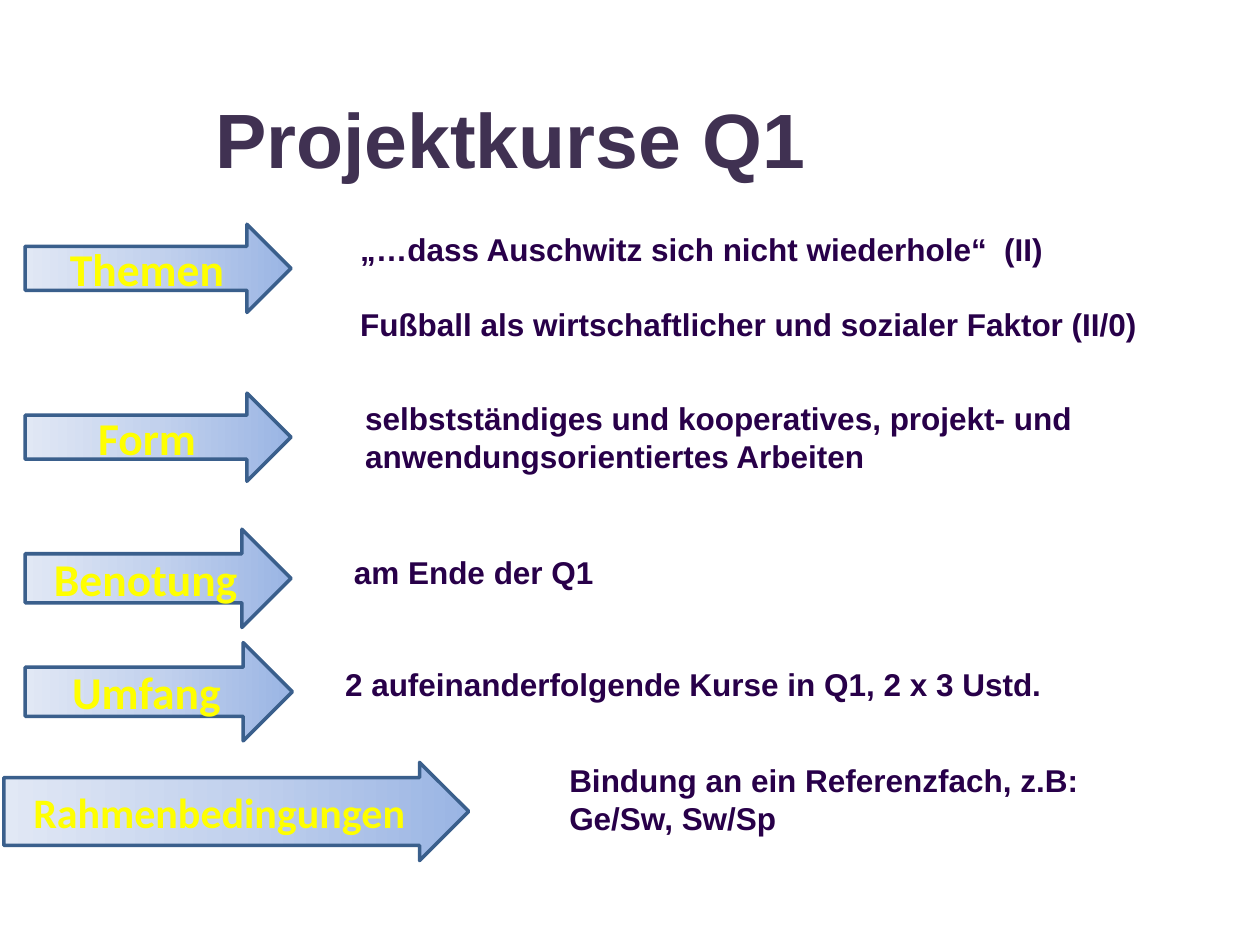
import copy

import pptx
import pptx.dml.color
import pptx.enum.shapes
import pptx.enum.text
import pptx.oxml.ns
import pptx.util

RGBColor = pptx.dml.color.RGBColor
WHITE = RGBColor(0xFF, 0xFF, 0xFF)
YELLOW = RGBColor(0xFF, 0xFF, 0x00)
OUTLINE = RGBColor(0x3A, 0x5F, 0x8C)
INDIGO = RGBColor(0x28, 0x00, 0x49)
PLUM = RGBColor(0x40, 0x31, 0x52)
GRADIENT = (
    RGBColor(0x9A, 0xB5, 0xE4),
    RGBColor(0xC2, 0xD1, 0xED),
    RGBColor(0xE1, 0xE8, 0xF5),
)

WIDTH = pptx.util.Inches(10)
HEIGHT = pptx.util.Inches(7.5)

LABEL = {"name": "Calibri", "bold": True}
BODY = {"name": "Arial", "bold": True, "size": pptx.util.Pt(18)}
TITLE = {"name": "Arial", "bold": True, "size": pptx.util.Pt(44)}
PARAGRAPH_GAP = pptx.util.Pt(21)

ARROWS = [
    ("Themen", (2, 23.73, 21.1, 9.33), 26, 0.5),
    ("Form", (2, 41.6, 21.1, 9.33), 26, 0.5),
    ("Benotung", (2, 56, 21.1, 10.4), 26, 0.5),
    ("Umfang", (2, 68, 21.2, 10.4), 26, 0.5),
    ("Rahmenbedingungen", (0.3, 80.67, 36.9, 10.4), 24, 0.69),
]
DETAILS = [
    (["„…dass Auschwitz sich nicht wiederhole“  (II)",
      "Fußball als wirtschaftlicher und sozialer Faktor (II/0)"],
     (27.6, 23.73, 68, 13.47)),
    (["selbstständiges und kooperatives, projekt- und "
      "anwendungsorientiertes Arbeiten"], (28, 41.6, 70.3, 9.47)),
    (["am Ende der Q1"], (27.1, 57.87, 62.5, 5.33)),
    (["2 aufeinanderfolgende Kurse in Q1, 2 x 3 Ustd."],
     (26.4, 69.73, 70.3, 5.33)),
    (["Bindung an ein Referenzfach, z.B:  Ge/Sw, Sw/Sp"],
     (44.2, 79.87, 51.4, 9.47)),
]


def place(shares):
    sides = (WIDTH, HEIGHT, WIDTH, HEIGHT)
    return [int(side * share / 100) for side, share in zip(sides, shares)]


def set_format(target, values):
    for name, value in values.items():
        setattr(target, name, value)


def write(p, text, style, color):
    r = p.add_run()
    r.text = text
    set_format(r.font, style)
    r.font.color.rgb = color


def fill_gradient(sp):
    sp.fill.gradient()
    sp.fill.gradient_angle = 180
    stops = sp._element.spPr.find(".//" + pptx.oxml.ns.qn("a:gsLst"))
    stops.insert(1, copy.deepcopy(stops[0]))
    for i, (stop, color) in enumerate(zip(sp.fill.gradient_stops, GRADIENT)):
        stop.position = i / 2
        stop.color.rgb = color


def add_arrow(s, text, shares, size, shaft):
    kind = pptx.enum.shapes.MSO_SHAPE.RIGHT_ARROW
    sp = s.shapes.add_shape(kind, *place(shares))
    sp.shadow.inherit = False
    sp.adjustments[0] = shaft
    fill_gradient(sp)
    sp.line.color.rgb = OUTLINE
    sp.line.width = pptx.util.Pt(2)
    tf = sp.text_frame
    tf.vertical_anchor = pptx.enum.text.MSO_ANCHOR.MIDDLE
    p = tf.paragraphs[0]
    p.alignment = pptx.enum.text.PP_ALIGN.CENTER
    write(p, text, {**LABEL, "size": pptx.util.Pt(size)}, YELLOW)


def add_text(s, lines, shares, style, color, wrap=True):
    tf = s.shapes.add_textbox(*place(shares)).text_frame
    set_format(tf, {
        "word_wrap": wrap,
        "auto_size": pptx.enum.text.MSO_AUTO_SIZE.SHAPE_TO_FIT_TEXT,
    })
    for i, line in enumerate(lines):
        p = tf.add_paragraph() if i else tf.paragraphs[0]
        if i:
            p.space_before = PARAGRAPH_GAP
        write(p, line, style, color)


def main():
    prs = pptx.Presentation()
    set_format(prs, {"slide_width": WIDTH, "slide_height": HEIGHT})
    s = prs.slides.add_slide(prs.slide_layouts[6])
    s.background.fill.solid()
    s.background.fill.fore_color.rgb = WHITE
    add_text(s, ["Projektkurse Q1"], (16.1, 9.07, 49.4, 11.2),
             TITLE, PLUM, wrap=False)
    for arrow in ARROWS:
        add_arrow(s, *arrow)
    for lines, shares in DETAILS:
        add_text(s, lines, shares, BODY, INDIGO)
    prs.save("out.pptx")


if __name__ == "__main__":
    main()
